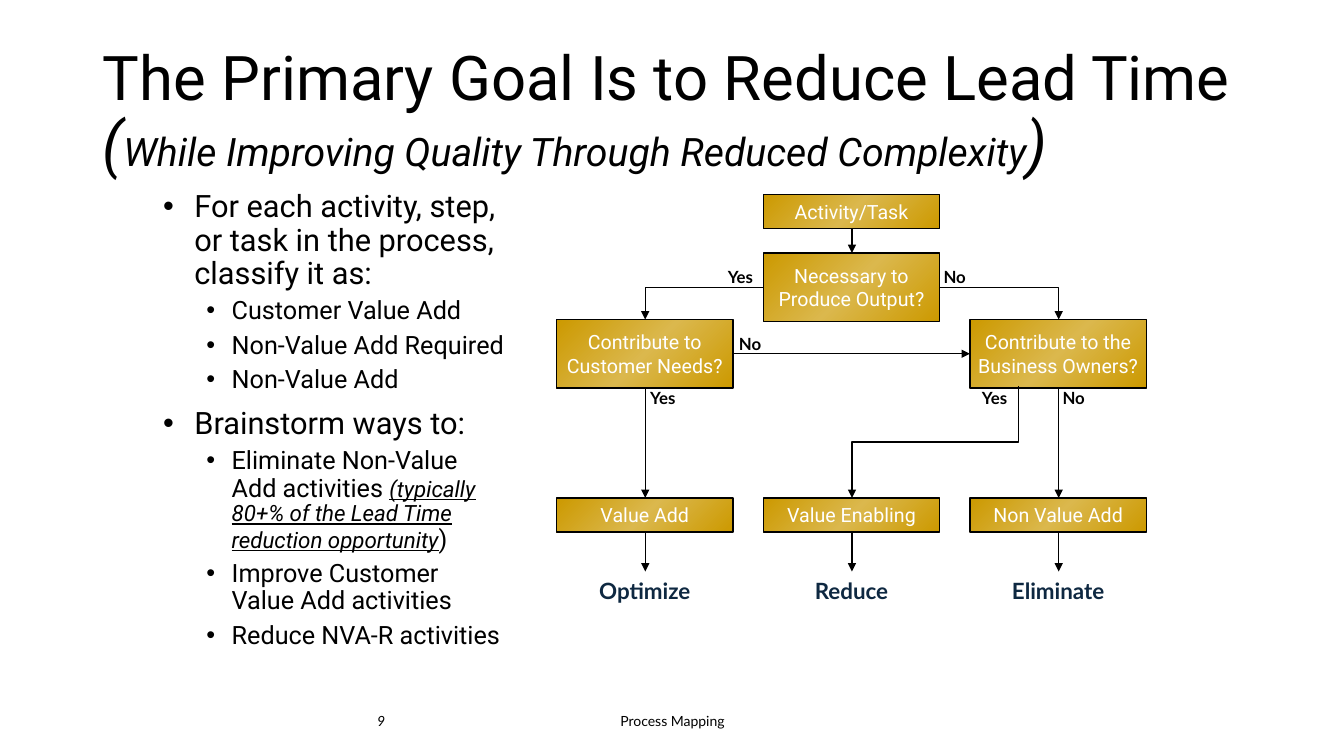
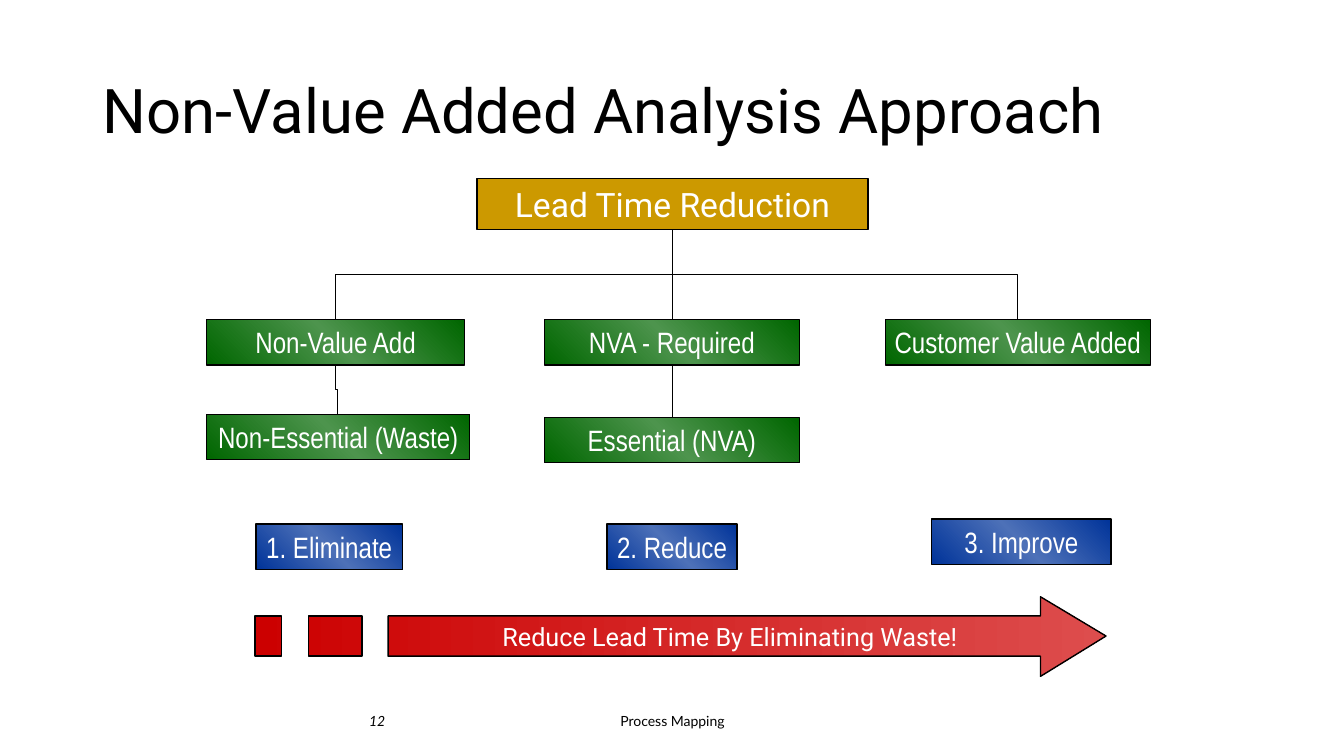
from copy import deepcopy

from lxml.etree import SubElement
from pptx import Presentation
from pptx.dml.color import RGBColor
from pptx.enum.shapes import MSO_CONNECTOR as LINK, MSO_SHAPE as SHAPE
from pptx.enum.text import MSO_ANCHOR as ANCHOR, MSO_AUTO_SIZE as FIT, PP_ALIGN as ALIGN
from pptx.oxml.ns import qn
from pptx.util import Pt

PX = 9144  # 100 px to the inch
BLACK = RGBColor(0x00, 0x00, 0x00)
WHITE = RGBColor(0xFF, 0xFF, 0xFF)
NAVY = RGBColor(0x0E, 0x28, 0x41)
RED = RGBColor(0xCC, 0x00, 0x00)
ROSE = RGBColor(0xDD, 0x4D, 0x4D)
OCHRE = RGBColor(0xCC, 0x99, 0x00)
GOLD = (OCHRE, RGBColor(0xDB, 0xB8, 0x4D))
GREEN = (RGBColor(0x00, 0x66, 0x00), RGBColor(0x4D, 0x94, 0x4D))
BLUE = (RGBColor(0x00, 0x33, 0x99), RGBColor(0x4D, 0x71, 0xB8))
HEAD, NOTE, SLIM = "Roboto", "Lato", "Arial Narrow"


def add_run(par, text, size, font=HEAD, color=BLACK, bold=False, italic=False, under=False):
    run = par.add_run()
    run.text = text
    face = run.font
    face.size, face.name, face.color.rgb = Pt(size), font, color
    face.bold, face.italic, face.underline = bold, italic, under


def add_box(page, area, text, size, font, color=BLACK, fill=None, align=ALIGN.CENTER, **look):
    """Add a text box, or a framed box if fill is one colour or an (edge, middle) pair."""
    area = [n * PX for n in area]
    if fill is None:
        box = page.shapes.add_textbox(*area)
    else:
        box = page.shapes.add_shape(SHAPE.RECTANGLE, *area)
        box.shadow.inherit = False
        box.line.color.rgb, box.line.width = BLACK, Pt(1)
        if isinstance(fill, RGBColor):
            box.fill.solid()
            box.fill.fore_color.rgb = fill
        else:
            edge, mid = fill
            box.fill.gradient()
            box.fill.gradient_angle = 315
            stops = box.element.spPr.find(".//" + qn("a:gsLst"))
            stops.append(deepcopy(stops[0]))
            for stop, tint, place in zip(box.fill.gradient_stops, (edge, mid, edge), (0, 0.5, 1)):
                stop.color.rgb, stop.position = tint, place
    frame = box.text_frame
    frame.word_wrap = fill is None
    frame.vertical_anchor = ANCHOR.MIDDLE
    for i, line in enumerate(text.split("\n")):
        par = frame.add_paragraph() if i else frame.paragraphs[0]
        par.alignment = align
        add_run(par, line, size, font, color, **look)
    return box


# Shared: slide size, title place, titles and footers
deck = Presentation()
deck.slide_width, deck.slide_height = 1333 * PX, 750 * PX
plain = deck.slide_layouts[5]
top = plain.placeholders[0]
top.left, top.top, top.width, top.height = (n * PX for n in (92, 40, 1150, 145))
titles = [
    ("9", [("The Primary Goal Is to Reduce Lead Time ", 44, False), ("(", 44, True),
           ("While Improving Quality Through Reduced Complexity", 28, True), (")", 44, True)]),
    ("12", [("Non-Value Added Analysis Approach", 44, False)]),
]
for number, runs in titles:
    page = deck.slides.add_slide(plain)
    frame = page.shapes.title.text_frame
    frame.auto_size, frame.vertical_anchor = FIT.NONE, ANCHOR.MIDDLE
    par = frame.paragraphs[0]
    par.alignment, par.line_spacing = ALIGN.LEFT, 0.9
    for text, size, slant in runs:
        add_run(par, text, size, italic=slant)
    add_box(page, (92, 695, 300, 40), number, 10, NOTE, align=ALIGN.RIGHT, italic=True)
    add_box(page, (442, 695, 450, 40), "Process Mapping", 10, NOTE)
goal, plan = deck.slides

# Goal: bullets
frame = goal.shapes.add_textbox(152 * PX, 185 * PX, 360 * PX, 540 * PX).text_frame
frame.word_wrap = True
points = [
    (0, "For each activity, step, or task in the process, classify it as:"),
    (1, "Customer Value Add"),
    (1, "Non-Value Add Required"),
    (1, "Non-Value Add"),
    (0, "Brainstorm ways to:"),
    (1, "Eliminate Non-Value Add activities "),
    (1, "Improve Customer Value Add activities"),
    (1, "Reduce NVA-R activities"),
]
levels = [(22, 10, 31, 31), (18, 5, 68, 25)]
for i, (level, text) in enumerate(points):
    size, gap, left, hang = levels[level]
    par = frame.add_paragraph() if i else frame.paragraphs[0]
    par.level, par.line_spacing, par.space_before = level, 0.9, Pt(gap)
    props = par._p.get_or_add_pPr()
    props.set("marL", str(left * PX))
    props.set("indent", str(-hang * PX))
    SubElement(props, qn("a:buFont")).set("typeface", "Arial")
    SubElement(props, qn("a:buChar")).set("char", "•")
    add_run(par, text, size)
    if text.startswith("Eliminate"):
        add_run(par, "(typically 80+% of the Lead Time reduction opportunity", 16,
                italic=True, under=True)
        add_run(par, ")", size)

# Goal: decision flow in three columns
cols = [552 + 205 * i for i in range(3)]
west, core, east = mids = [x + 88 for x in cols]
steps = [
    (1, 193, 34, "Activity/Task"),
    (1, 251, 68, "Necessary to\nProduce Output?"),
    (0, 317, 68, "Contribute to\nCustomer Needs?"),
    (2, 317, 68, "Contribute to the\nBusiness Owners?"),
    (0, 494, 34, "Value Add"),
    (1, 494, 34, "Value Enabling"),
    (2, 494, 34, "Non Value Add"),
]
for col, y, high, text in steps:
    add_box(goal, (cols[col], y, 175, high), text, 14, HEAD, WHITE, GOLD)
answers = [(712, 260, "Yes"), (926, 260, "No"), (723, 326, "No"),
           (635, 380, "Yes"), (964, 380, "Yes"), (1044, 380, "No")]
for x, y, text in answers:
    add_box(goal, (x, y, 50, 30), text, 12, NOTE, align=ALIGN.LEFT, bold=True)
for x, text in zip(mids, ("Optimize", "Reduce", "Eliminate")):
    add_box(goal, (x - 63, 567, 125, 37), text, 16, NOTE, NAVY, bold=True)

# Plan: tree of boxes
add_box(plan, (473, 177, 388, 51), "Lead Time Reduction", 24, HEAD, WHITE, OCHRE)
parts = [
    (GREEN, 205, 317, 256, "Non-Value Add"),
    (GREEN, 540, 317, 253, "NVA - Required"),
    (GREEN, 878, 317, 263, "Customer Value Added"),
    (GREEN, 205, 411, 261, "Non-Essential (Waste)"),
    (GREEN, 540, 414, 253, "Essential (NVA)"),
    (BLUE, 254, 520, 145, "1. Eliminate"),
    (BLUE, 602, 520, 129, "2. Reduce"),
    (BLUE, 924, 515, 178, "3. Improve"),
]
for fill, x, y, wide, text in parts:
    box = add_box(plan, (x, y, wide, 45), text, 21, SLIM, WHITE, fill)
    box.element.spPr.find(qn("a:xfrm")).set("flipH", "1")

# Plan: arrow with two loose blocks behind it
pen = plan.shapes.build_freeform(1032, 592, scale=PX)
pen.add_line_segments([(1032, 611), (385, 611), (385, 651), (1032, 651), (1032, 671), (1097, 631)])
for left, right in ((306, 359), (253, 279)):
    pen.move_to(left, 611)
    pen.add_line_segments([(left, 651), (right, 651), (right, 611)])
arrow = pen.convert_to_shape()
arrow.shadow.inherit = False
arrow.line.color.rgb, arrow.line.width = BLACK, Pt(1)
arrow.fill.gradient()
arrow.fill.gradient_angle = 0
for stop, tint, place in zip(arrow.fill.gradient_stops, (RED, ROSE), (0, 1)):
    stop.color.rgb, stop.position = tint, place
frame = arrow.text_frame
frame.margin_left, frame.vertical_anchor = 108 * PX, ANCHOR.MIDDLE
frame.paragraphs[0].alignment = ALIGN.CENTER
add_run(frame.paragraphs[0], "Reduce Lead Time By Eliminating Waste!", 18, color=WHITE)

# Links: "line" is straight, "turn" bends once, "step" goes down, across, down
links = [
    (goal, "line", core, 227, core, 251),
    (goal, "turn", 757, 285, west, 317),
    (goal, "turn", 932, 285, east, 317),
    (goal, "line", 727, 351, 962, 351),
    (goal, "line", west, 385, west, 494),
    (goal, "step", 1010, 383, core, 494),
    (goal, "line", east, 385, east, 494),
    *[(goal, "line", x, 528, x, 567) for x in mids],
    (plan, "step", 667, 228, 333, 317),
    (plan, "line", 667, 228, 667, 317),
    (plan, "step", 667, 228, 1009, 317),
    (plan, "step", 333, 362, 335, 411),
    (plan, "line", 667, 362, 667, 414),
]
for page, kind, x1, y1, x2, y2 in links:
    ends = [n * PX for n in (x1, y1, x2, y2)]
    if kind == "step":  # laid flat around its centre, then turned by 90 degrees
        x1, y1, x2, y2 = ends
        mid_x, mid_y = (x1 + x2) // 2, (y1 + y2) // 2
        run, rise = (y2 - y1) // 2, (x1 - x2) // 2
        ends = [mid_x - run, mid_y - rise, mid_x + run, mid_y + rise]
    link = page.shapes.add_connector(LINK.STRAIGHT if kind == "line" else LINK.ELBOW, *ends)
    link.line.color.rgb, link.line.width = BLACK, Pt(1)
    props = link.element.spPr
    if kind == "step":
        props.find(qn("a:xfrm")).set("rot", str(90 * 60000))
    elif kind == "turn":
        props.find(qn("a:prstGeom")).set("prst", "bentConnector2")
    if page is goal:
        SubElement(link.get_or_add_ln(), qn("a:tailEnd")).set("type", "triangle")
    SubElement(props, qn("a:effectLst"))

deck.save("out.pptx")
